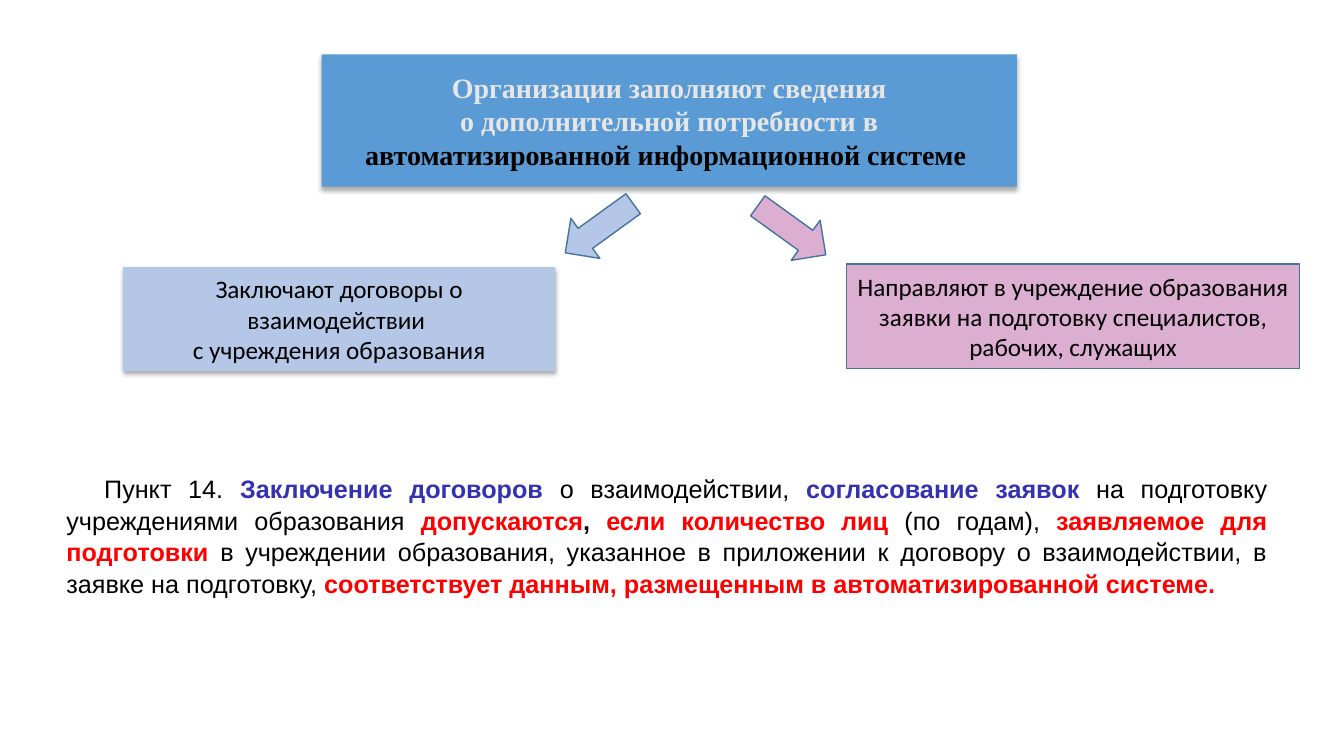
from lxml import etree
from pptx import Presentation
from pptx.dml.color import RGBColor
from pptx.enum import shapes, text
from pptx.oxml import ns
from pptx.util import Pt

COLORS = {
    "black": "000000", "light": "E7E6E6", "blue": "5B9BD5", "pale": "B4C7E7",
    "pink": "DCAED2", "edge": "43739E", "indigo": "3532B2", "red": "FF0000",
}
ARIAL = {"name": "Arial", "size": Pt(18), "bold": False}
CALIBRI = {"name": "Calibri", "size": Pt(18), "bold": False}
TIMES = {"name": "Times New Roman", "size": Pt(20), "bold": True}

TITLE = [
    [("Организации заполняют сведения", "light")],
    [(" о дополнительной потребности в ", "light")],
    [("автоматизированной информационной системе ", "black")],
]
CONTRACTS = [
    [("Заключают договоры о взаимодействии ", "black")],
    [("с учреждения образования", "black")],
]
REQUESTS = [[("Направляют в учреждение образования заявки на подготовку "
              "специалистов, рабочих, служащих", "black")]]
CLAUSE = [
    ("Пункт 14. ", "black", False),
    ("Заключение договоров ", "indigo", True),
    ("о взаимодействии, ", "black", False),
    ("согласование заявок ", "indigo", True),
    ("на подготовку учреждениями образования ", "black", False),
    ("допускаются", "red", True),
    (", ", "black", True),
    ("если количество лиц ", "red", True),
    ("(по годам), ", "black", False),
    ("заявляемое для подготовки ", "red", True),
    ("в учреждении образования, указанное в приложении к договору о "
     "взаимодействии, в заявке на подготовку, ", "black", False),
    ("соответствует данным, размещенным в автоматизированной системе.", "red", True),
]


def rgb(name):
    return RGBColor.from_string(COLORS[name])


def add_run(p, words, color, font):
    r = p.add_run()
    r.text = words
    for key, value in font.items():
        setattr(r.font, key, value)
    r.font.color.rgb = rgb(color)


def add_filled(s, kind, box, fill, outlined):
    sp = s.shapes.add_shape(kind, *map(Pt, box))
    sp.fill.solid()
    sp.fill.fore_color.rgb = rgb(fill)
    if outlined:
        sp.line.color.rgb = rgb("edge")
        sp.line.width = Pt(1)
    else:
        sp.line.fill.background()
    sp.shadow.inherit = False
    return sp


def add_drop_shadow(sp):
    effects = sp.element.spPr.find(ns.qn("a:effectLst"))
    shadow = etree.SubElement(effects, ns.qn("a:outerShdw"), blurRad=str(Pt(3.5)),
                              dist=str(Pt(2.2)), dir="5400000", rotWithShape="0")
    color = etree.SubElement(shadow, ns.qn("a:srgbClr"), val=COLORS["black"])
    etree.SubElement(color, ns.qn("a:alpha"), val="32000")


def add_box(s, box, fill, lines, font, outlined=False):
    sp = add_filled(s, shapes.MSO_SHAPE.RECTANGLE, box, fill, outlined)
    if not outlined:
        add_drop_shadow(sp)
    tf = sp.text_frame
    tf.word_wrap = True
    tf.vertical_anchor = text.MSO_ANCHOR.MIDDLE
    for i, line in enumerate(lines):
        p = tf.add_paragraph() if i else tf.paragraphs[0]
        p.alignment = text.PP_ALIGN.CENTER
        for words, color in line:
            add_run(p, words, color, font)


def add_arrow(s, left, top, rotation, fill):
    sp = add_filled(s, shapes.MSO_SHAPE.DOWN_ARROW, (left, top, 35.3, 59.8), fill, True)
    sp.rotation = rotation


def add_clause(s, box):
    tf = s.shapes.add_textbox(*map(Pt, box)).text_frame
    tf.word_wrap = True
    tf.auto_size = text.MSO_AUTO_SIZE.SHAPE_TO_FIT_TEXT
    p = tf.paragraphs[0]
    layout = {"alignment": text.PP_ALIGN.JUSTIFY, "space_before": Pt(10), "line_spacing": 1.05}
    for key, value in layout.items():
        setattr(p, key, value)
    p._p.get_or_add_pPr().set("indent", str(Pt(27)))
    for words, color, bold in CLAUSE:
        add_run(p, words, color, {**ARIAL, "bold": bold})


def main():
    """Build the slide on contracts and requests for training."""
    prs = Presentation()
    prs.slide_width, prs.slide_height = Pt(960), Pt(540)
    s = prs.slides.add_slide(prs.slide_layouts[6])
    add_clause(s, (40.3, 333.4, 871.9, 94.3))
    add_box(s, (229.7, 38.9, 496.8, 94.5), "blue", TITLE, TIMES)
    add_box(s, (87.8, 190.8, 308.9, 74.2), "pale", CONTRACTS, CALIBRI)
    add_box(s, (604.8, 188.6, 323.5, 74.9), "pink", REQUESTS, CALIBRI, outlined=True)
    add_arrow(s, 410.4, 133.2, 54.1, "pale")
    add_arrow(s, 547.9, 134.6, 305.8, "pink")
    prs.save("out.pptx")


if __name__ == "__main__":
    main()
